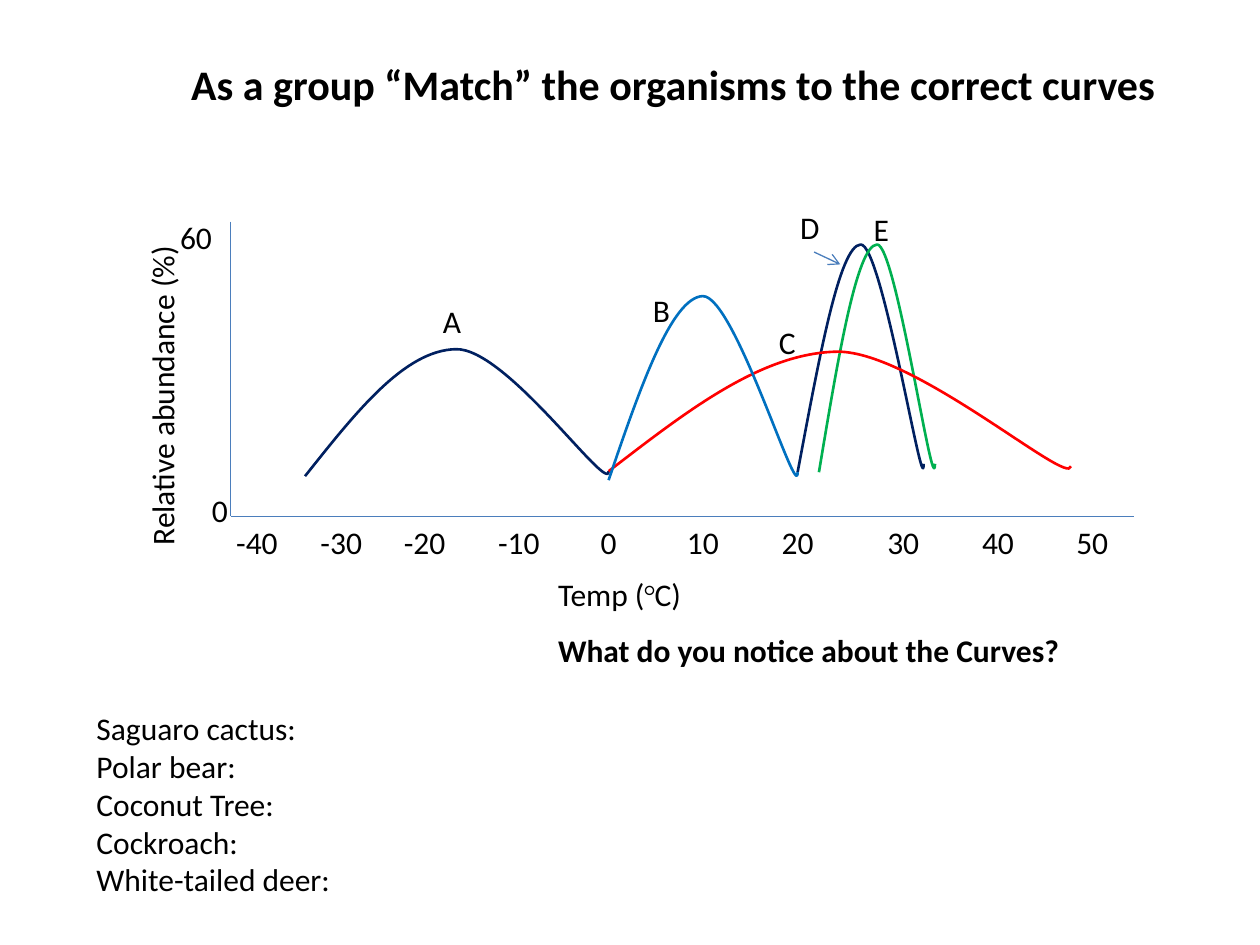
from lxml.etree import SubElement
from pptx import Presentation
from pptx.dml.color import RGBColor
from pptx.enum.shapes import MSO_CONNECTOR
from pptx.enum.text import MSO_ANCHOR, MSO_AUTO_SIZE, PP_ALIGN
from pptx.oxml.ns import qn
from pptx.util import Cm, Pt

BLACK = RGBColor(0x00, 0x00, 0x00)
AXIS_BLUE = RGBColor(0x4B, 0x7E, 0xBC)
NAVY = RGBColor(0x00, 0x20, 0x60)
GREEN = RGBColor(0x00, 0xB0, 0x50)
RED = RGBColor(0xFF, 0x00, 0x00)
BLUE = RGBColor(0x00, 0x70, 0xC0)

# Content; boxes are left, top, width, height in cm
HEADING = "As a group “Match” the organisms to the correct curves"
HEADING_BOX = (3.6, 1.05, 21.17, 1.28)
ORGANISMS = ["Saguaro cactus:", "Polar bear:", "Coconut Tree:",
             "Cockroach:", "White-tailed deer:"]
ORGANISMS_BOX = (1.69, 14.17, 22.44, 4.87)
QUESTION = "What do you notice about the Curves?"
QUESTION_BOX = (11, 12.6, 12.9, 1.02)
TEMPERATURE = [("Temp (", 0), ("○", 30000), ("C)", 0)]
TEMPERATURE_BOX = (11, 11.46, 3.81, 1.02)
ABUNDANCE = "Relative abundance (%)"
ABUNDANCE_BOX = (-0.23, 7.24, 6.99, 1.02)

ORIGIN_X, ORIGIN_Y = 4.65, 10.41
AXIS_TOP, AXIS_RIGHT = 4.47, 22.86
TICK_WIDTH, LABEL_HEIGHT = 1.48, 1.02
TICK_CENTRES = {"-40": 5.18, "-30": 6.88, "-20": 8.56, "-10": 10.46, "0": 12.27,
                "10": 14.17, "20": 16.08, "30": 18.21, "40": 20.12, "50": 22.02}
ABUNDANCE_TICKS = [("60", 3.38, 4.27), ("0", 4.02, 9.78)]
CURVE_LABELS = [("A", 8.68, 5.97), ("B", 12.91, 5.74), ("C", 15.45, 6.38),
                ("D", 15.88, 4.06), ("E", 17.36, 4.1)]

# Start point, then two Bézier segments of three points each
CURVES = [
    (NAVY, [(16.08, 9.52), (16.51, 7.24), (16.92, 4.95), (17.35, 4.93),
            (17.78, 4.9), (18.62, 10.19), (18.62, 9.35)]),
    (NAVY, [(6.15, 9.6), (7.16, 8.33), (8.15, 7.06), (9.19, 7.04),
            (10.21, 7.01), (12.27, 9.98), (12.27, 9.5)]),
    (GREEN, [(16.51, 9.52), (16.89, 7.24), (17.27, 4.95), (17.68, 4.93),
             (18.06, 4.9), (18.82, 10.19), (18.85, 9.35)]),
    (RED, [(12.27, 9.5), (13.82, 8.31), (15.34, 7.11), (16.89, 7.09),
           (18.44, 7.09), (21.56, 9.83), (21.59, 9.4)]),
    (BLUE, [(12.27, 9.68), (12.9, 7.82), (13.54, 5.99), (14.17, 5.97),
            (14.81, 5.97), (16.08, 10.19), (16.08, 9.52)]),
]

FRAME_FORMAT = {"word_wrap": True, "auto_size": MSO_AUTO_SIZE.NONE,
                "vertical_anchor": MSO_ANCHOR.TOP}
PARAGRAPH_FORMAT = {"space_before": Pt(0), "space_after": Pt(0)}
FONT_FORMAT = {"name": "Calibri", "size": Pt(18), "bold": False}


def set_all(target, values):
    for name, value in values.items():
        setattr(target, name, value)


def place(holder, box):
    set_all(holder, dict(zip(("left", "top", "width", "height"), map(Cm, box))))


def write(holder, lines, align=PP_ALIGN.LEFT, **font_changes):
    """Each line is a list of (text, baseline) runs."""
    frame = holder.text_frame
    set_all(frame, FRAME_FORMAT)
    for number, line in enumerate(lines):
        paragraph = frame.add_paragraph() if number else frame.paragraphs[0]
        set_all(paragraph, {**PARAGRAPH_FORMAT, "alignment": align})
        for text, baseline in line:
            run = paragraph.add_run()
            run.text = text
            set_all(run.font, {**FONT_FORMAT, **font_changes})
            run.font.color.rgb = BLACK
            if baseline:
                run._r.get_or_add_rPr().set("baseline", str(baseline))


def add_label(slide, runs, box, **formats):
    label = slide.shapes.add_textbox(*map(Cm, box))
    write(label, [runs], **formats)
    return label


def add_line(slide, *ends):
    line = slide.shapes.add_connector(MSO_CONNECTOR.STRAIGHT, *map(Cm, ends))
    line.line.color.rgb = AXIS_BLUE
    line.line.width = Pt(0.75)
    SubElement(line._element.spPr, qn("a:effectLst"))
    return line


def add_curve(slide, color, points):
    start, *rest = [(Cm(x), Cm(y)) for x, y in points]
    builder = slide.shapes.build_freeform(*start)
    builder.add_line_segments(rest, close=False)
    curve = builder.convert_to_shape()
    curve.shadow.inherit = False
    curve.fill.background()
    curve.line.color.rgb = color
    curve.line.width = Pt(1.5)
    # Turn every three straight segments into one Bézier segment
    segments = list(curve._element.iter(qn("a:lnTo")))
    outline = segments[0].getparent()
    for first in range(0, len(segments), 3):
        bezier = SubElement(outline, qn("a:cubicBezTo"))
        for segment in segments[first:first + 3]:
            bezier.append(segment[0])
            outline.remove(segment)


def main():
    deck = Presentation()
    deck.slide_width, deck.slide_height = Cm(25.4), Cm(19.05)
    slide = deck.slides.add_slide(deck.slide_layouts[1])

    # Heading and organism list
    heading, organisms = slide.placeholders
    place(heading, HEADING_BOX)
    write(heading, [[(HEADING, 0)]], size=Pt(24), bold=True)
    place(organisms, ORGANISMS_BOX)
    write(organisms, [[(organism, 0)] for organism in ORGANISMS])
    for paragraph in organisms.text_frame.paragraphs:
        properties = paragraph._p.get_or_add_pPr()
        set_all_indents = {"marL": "0", "indent": "0"}
        for name, value in set_all_indents.items():
            properties.set(name, value)
        SubElement(properties, qn("a:buNone"))

    add_label(slide, [(QUESTION, 0)], QUESTION_BOX, bold=True)

    # Axes with titles and ticks
    add_line(slide, ORIGIN_X, AXIS_TOP, ORIGIN_X, ORIGIN_Y)
    add_line(slide, ORIGIN_X, ORIGIN_Y, AXIS_RIGHT, ORIGIN_Y)
    add_label(slide, TEMPERATURE, TEMPERATURE_BOX)
    add_label(slide, [(ABUNDANCE, 0)], ABUNDANCE_BOX).rotation = 270
    for tick, centre in TICK_CENTRES.items():
        box = (centre - TICK_WIDTH / 2, ORIGIN_Y, TICK_WIDTH, LABEL_HEIGHT)
        add_label(slide, [(tick, 0)], box, align=PP_ALIGN.CENTER)

    # Curves and their letters
    for color, points in CURVES:
        add_curve(slide, color, points)
    for text, left, top in ABUNDANCE_TICKS + CURVE_LABELS:
        add_label(slide, [(text, 0)], (left, top, TICK_WIDTH, LABEL_HEIGHT))

    # Arrow from D to its curve
    pointer = add_line(slide, 16.41, 5.08, 16.94, 5.33)
    SubElement(pointer.line._get_or_add_ln(), qn("a:tailEnd"), type="arrow")

    deck.save("out.pptx")


if __name__ == "__main__":
    main()
